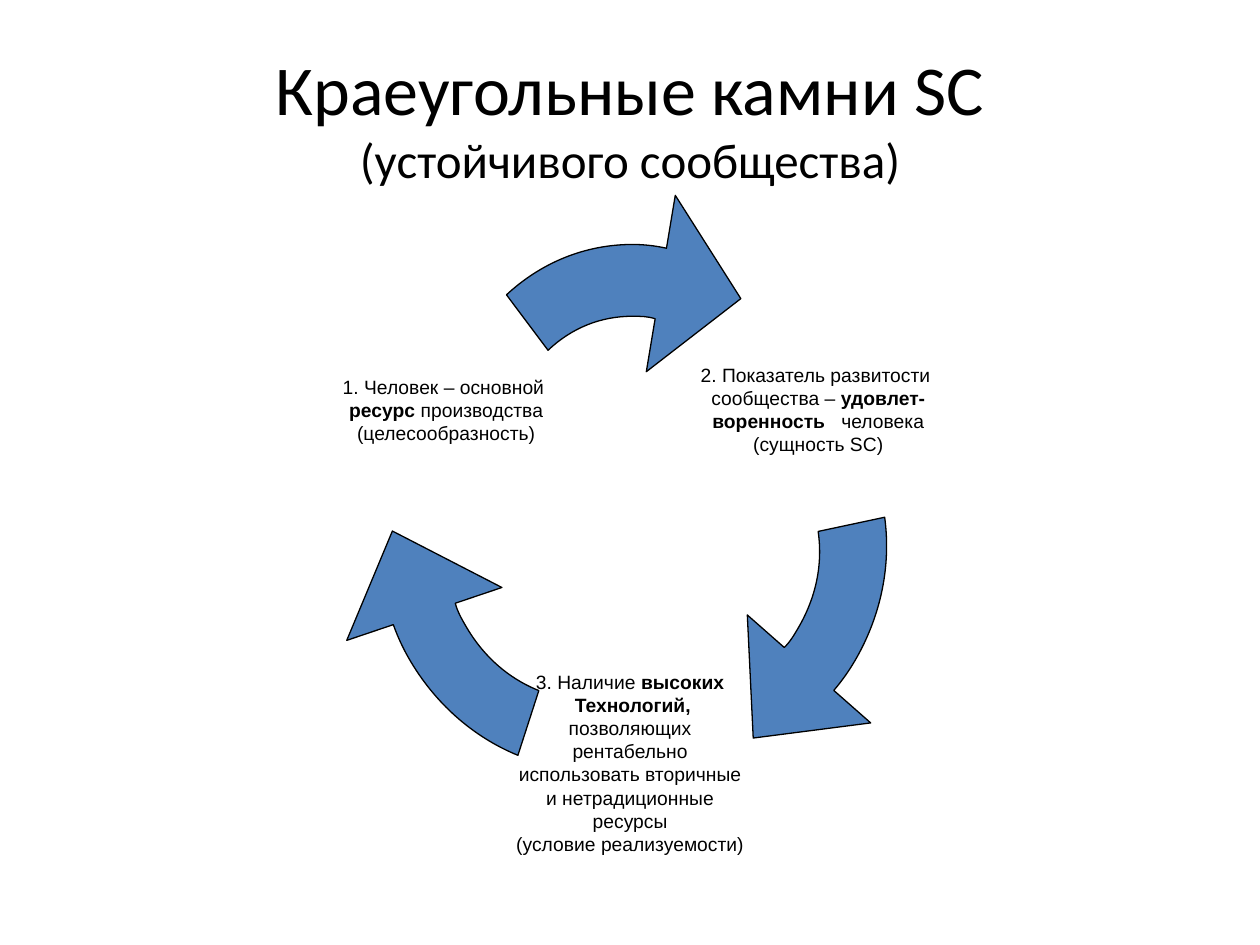
from lxml import etree
from pptx import Presentation
from pptx.dml.color import RGBColor
from pptx.enum.text import MSO_ANCHOR, MSO_AUTO_SIZE, PP_ALIGN
from pptx.oxml.ns import qn
from pptx.util import Pt

BLACK = "000000"
BLUE = "4F81BD"

# One curved arrow, drawn on a grid that is stretched over its frame
ARROW_GRID = (311, 341)
ARROW_OUTLINE = [
    ("moveTo", [(174, 59)]),
    ("cubicBezTo", [(168, 57), (162, 57), (156, 57)]),
    ("cubicBezTo", [(131, 57), (108, 66), (89, 84)]),
    ("lnTo", [(56, 40)]),
    ("cubicBezTo", [(84, 14), (119, 0), (156, 0)]),
    ("cubicBezTo", [(165, 0), (174, 1), (183, 3)]),
    ("lnTo", [(190, -39)]),
    ("lnTo", [(242, 43)]),
    ("lnTo", [(167, 101)]),
    ("close", []),
]

# Left, top, width, height and rotation of each arrow's frame
ARROW_FRAMES = [
    (249.1, 139.7, 223.9, 245.5, 0),
    (269.3, 208.8, 245.5, 223.9, 120),
    (208.1, 208.8, 245.5, 223.9, 240),
]

# Left, top and lines of each cornerstone; asterisks enclose bold words
CORNERSTONES = [
    (422.6, 184.5, ["2. Показатель развитости ",
                    "сообщества – *удовлет-*",
                    "*воренность*   человека",
                    "(сущность SC)"]),
    (316.6, 386.6, ["3. Наличие *высоких *",
                    "*Технологий,*",
                    "позволяющих ",
                    "рентабельно ",
                    "использовать вторичные ",
                    "и нетрадиционные ",
                    "ресурсы ",
                    "(условие реализуемости) "]),
    (210, 184.8, ["1. Человек – основной ",
                  "*ресурс* производства",
                  "(целесообразность)"]),
]


def color(value):
    return RGBColor.from_string(value)


def format_run(run, font_name, size, bold=False):
    run.font.name = font_name
    run.font.size = Pt(size)
    run.font.bold = bold
    run.font.color.rgb = color(BLACK)


def add_title(slide, lines):
    title = slide.shapes.title
    title.left, title.top, title.width, title.height = Pt(36), Pt(21.6), Pt(648), Pt(90)
    frame = title.text_frame
    frame.text = "\v".join(text for text, _ in lines)
    frame.vertical_anchor = MSO_ANCHOR.MIDDLE
    heading = frame.paragraphs[0]
    heading.alignment = PP_ALIGN.CENTER
    for run, (_, size) in zip(heading.runs, lines):
        format_run(run, "Calibri", size)


def draw_outline(shape, grid, outline):
    """Give a freeform an outline with true curves."""
    path = next(shape._element.iter(qn("a:path")))
    for segment in list(path):
        path.remove(segment)
    path.set("w", str(grid[0]))
    path.set("h", str(grid[1]))
    for command, points in outline:
        segment = etree.SubElement(path, qn("a:" + command))
        for x, y in points:
            etree.SubElement(segment, qn("a:pt"), x=str(x), y=str(y))


def add_arrow(slide, left, top, width, height, rotation):
    builder = slide.shapes.build_freeform(scale=Pt(1))
    builder.add_line_segments([(width, 0), (width, height)])
    arrow = builder.convert_to_shape()
    draw_outline(arrow, ARROW_GRID, ARROW_OUTLINE)
    arrow.left, arrow.top = Pt(left), Pt(top)
    arrow.width, arrow.height = Pt(width), Pt(height)
    arrow.rotation = rotation
    arrow.shadow.inherit = False
    arrow.fill.solid()
    arrow.fill.fore_color.rgb = color(BLUE)
    arrow.line.color.rgb = color(BLACK)
    arrow.line.width = Pt(0.75)


def add_cornerstone(slide, left, top, lines):
    cornerstone = slide.shapes.add_textbox(Pt(left), Pt(top), Pt(90), Pt(98.6))
    frame = cornerstone.text_frame
    frame.word_wrap = False
    frame.auto_size = MSO_AUTO_SIZE.NONE
    frame.vertical_anchor = MSO_ANCHOR.MIDDLE
    frame.margin_left = frame.margin_right = frame.margin_top = frame.margin_bottom = 0
    for index, line in enumerate(lines):
        paragraph = frame.paragraphs[0] if index == 0 else frame.add_paragraph()
        paragraph.alignment = PP_ALIGN.CENTER
        for position, words in enumerate(line.split("*")):
            if words:
                run = paragraph.add_run()
                run.text = words
                format_run(run, "Arial", 11, bold=position % 2 == 1)


def main():
    deck = Presentation()
    deck.slide_width, deck.slide_height = Pt(720), Pt(540)
    slide = deck.slides.add_slide(deck.slide_layouts[5])

    # Heading
    add_title(slide, [("Краеугольные камни SC", 40), ("(устойчивого сообщества)", 28)])

    # Cycle of arrows
    for frame in ARROW_FRAMES:
        add_arrow(slide, *frame)

    # Texts between the arrows
    for cornerstone in CORNERSTONES:
        add_cornerstone(slide, *cornerstone)

    deck.save("out.pptx")


if __name__ == "__main__":
    main()
